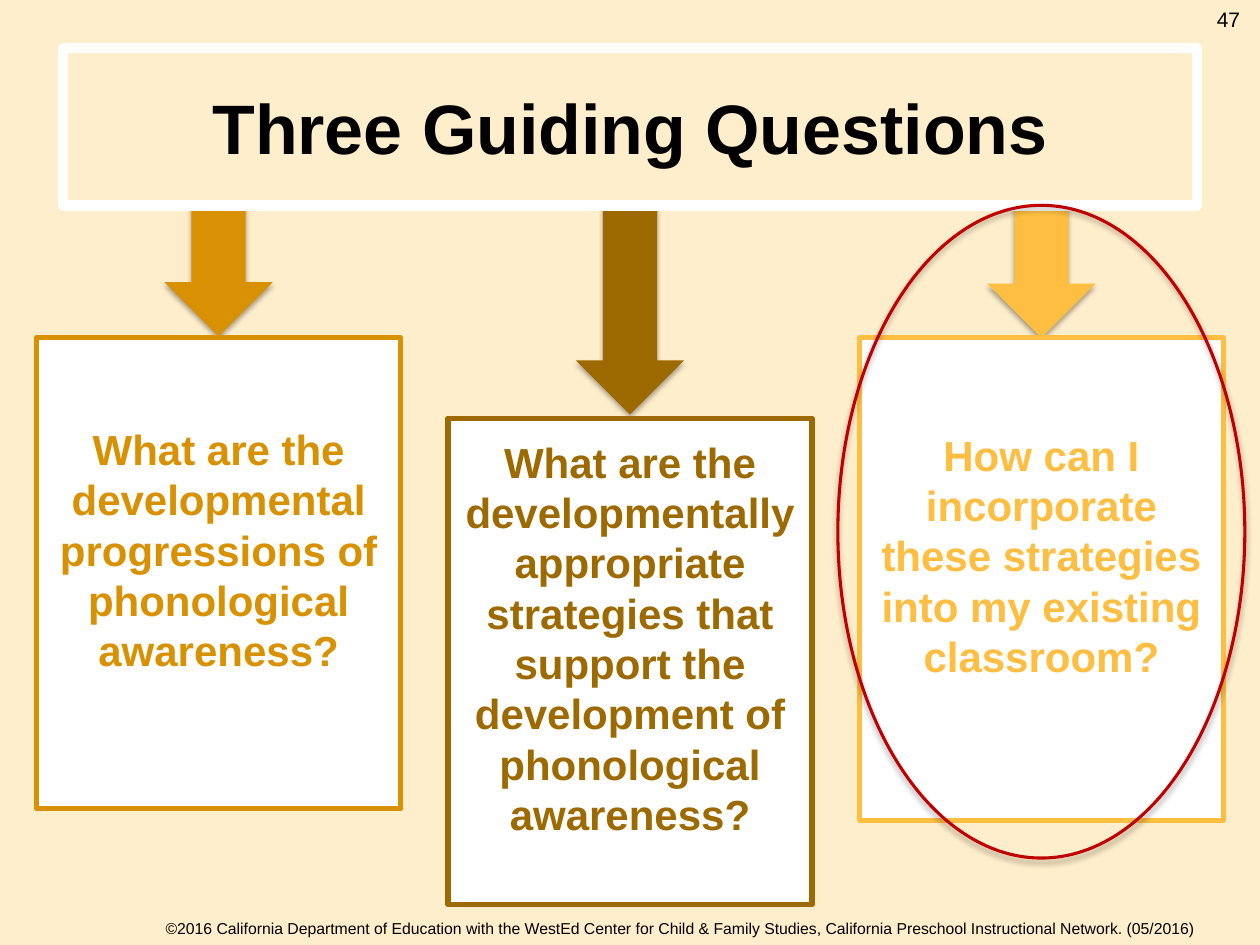
from dataclasses import dataclass

from lxml import etree
from pptx import Presentation
from pptx import util as u
from pptx.dml.color import RGBColor
from pptx.enum import shapes, text
from pptx.oxml import parse_xml
from pptx.oxml.ns import nsdecls

COLORS = {
    "background": "FFEECB",
    "white": "FFFFFF",
    "black": "000000",
    "amber": "D89102",
    "brown": "9D6901",
    "gold": "FDBE41",
    "red": "C00000",
}
FONT = "Arial"
SLIDE_WIDTH, SLIDE_HEIGHT = 10, 7.5
COLUMN_WIDTH = 2.89
COLUMN_LEFT = 0.29
COLUMN_STEP = (SLIDE_WIDTH - 2 * COLUMN_LEFT - COLUMN_WIDTH) / 2
ARROW_WIDTH = 0.86
TITLE_TOP, TITLE_HEIGHT = 0.38, 1.25
TITLE_BOTTOM = TITLE_TOP + TITLE_HEIGHT


@dataclass
class Question:
    column: int
    top: float
    height: float
    arrow_length: float
    color: str
    wording: str

    @property
    def left(self) -> float:
        return COLUMN_LEFT + self.column * COLUMN_STEP


QUESTIONS = [
    Question(0, 2.68, 3.74, 1.04, "amber",
             "What are the developmental progressions of phonological awareness?"),
    Question(1, 3.32, 3.86, 1.66, "brown",
             "What are the developmentally appropriate strategies that support "
             "the development of phonological awareness?"),
    Question(2, 2.68, 3.83, 1.05, "gold",
             "How can I incorporate these strategies into my existing classroom?"),
]


def rgb(name: str) -> RGBColor:
    return RGBColor.from_string(COLORS[name])


def inches(*lengths: float) -> list:
    return [u.Inches(length) for length in lengths]


def outline(shape, color: str, points: float) -> None:
    shape.line.color.rgb = rgb(color)
    shape.line.width = u.Pt(points)


def cast_shadow(shape) -> None:
    shape.shadow.inherit = False
    effects = shape.element.spPr.find(
        "{http://schemas.openxmlformats.org/drawingml/2006/main}effectLst")
    effects.append(parse_xml(
        f'<a:outerShdw {nsdecls("a")} blurRad="{u.Pt(3.1)}" dist="{u.Pt(1.8)}" '
        'dir="5400000" rotWithShape="0"><a:srgbClr val="000000">'
        '<a:alpha val="35000"/></a:srgbClr></a:outerShdw>'))


def write(frame, wording: str, size: float, color: str, bold: bool = False,
          anchor=text.MSO_ANCHOR.MIDDLE) -> None:
    frame.text = wording
    frame.word_wrap = True
    frame.auto_size = text.MSO_AUTO_SIZE.NONE
    frame.vertical_anchor = anchor
    paragraph = frame.paragraphs[0]
    paragraph.alignment = text.PP_ALIGN.CENTER
    for run in paragraph.runs:
        run.font.name = FONT
        run.font.size = u.Pt(size)
        run.font.bold = bold
        run.font.color.rgb = rgb(color)


def draw_arrow(slide, question: Question) -> None:
    left = question.left + (COLUMN_WIDTH - ARROW_WIDTH) / 2
    arrow = slide.shapes.add_shape(
        shapes.MSO_SHAPE.DOWN_ARROW,
        *inches(left, TITLE_BOTTOM, ARROW_WIDTH, question.arrow_length))
    arrow.fill.solid()
    arrow.fill.fore_color.rgb = rgb(question.color)
    arrow.line.fill.background()
    cast_shadow(arrow)


def draw_title(slide) -> None:
    title = slide.shapes.title
    title.left, title.top, title.width, title.height = inches(
        0.5, TITLE_TOP, 9, TITLE_HEIGHT)
    outline(title, "white", 6)
    write(title.text_frame, "Three Guiding Questions", 40, "black", bold=True)
    title.element.getparent().append(title.element)


def draw_question(slide, question: Question) -> None:
    box = slide.shapes.add_shape(
        shapes.MSO_SHAPE.RECTANGLE,
        *inches(question.left, question.top, COLUMN_WIDTH, question.height))
    box.shadow.inherit = False
    box.fill.solid()
    box.fill.fore_color.rgb = rgb("white")
    outline(box, question.color, 3)
    write(box.text_frame, question.wording, 24, question.color, bold=True)
    box.text_frame.margin_bottom = u.Inches(0.43)
    box.text_frame.paragraphs[0].line_spacing = u.Pt(28.75)


def draw_label(slide, place: tuple, wording: str, size: float, anchor) -> None:
    label = slide.shapes.add_textbox(*inches(*place))
    write(label.text_frame, wording, size, "black", anchor=anchor)


def draw_highlight(slide) -> None:
    ring = slide.shapes.add_shape(
        shapes.MSO_SHAPE.FLOWCHART_CONNECTOR, *inches(6.65, TITLE_BOTTOM, 3.23, 5.18))
    ring.fill.background()
    outline(ring, "red", 1.75)
    cast_shadow(ring)


def main() -> None:
    deck = Presentation()
    deck.slide_width, deck.slide_height = inches(SLIDE_WIDTH, SLIDE_HEIGHT)
    slide = deck.slides.add_slide(deck.slide_layouts.get_by_name("Title Only"))
    slide.background.fill.solid()
    slide.background.fill.fore_color.rgb = rgb("background")

    draw_label(
        slide, (0.79, 7.24, 9.21, 0.25),
        "©2016 California Department of Education with the WestEd Center for Child & "
        "Family Studies, California Preschool Instructional Network. (05/2016)",
        9, text.MSO_ANCHOR.MIDDLE)
    for question in QUESTIONS:
        draw_arrow(slide, question)
    draw_title(slide)
    for question in QUESTIONS:
        draw_question(slide, question)
    draw_label(slide, (9.5, 0, 0.5, 0.4), "47", 12, text.MSO_ANCHOR.TOP)
    draw_highlight(slide)
    deck.save("out.pptx")


if __name__ == "__main__":
    main()
